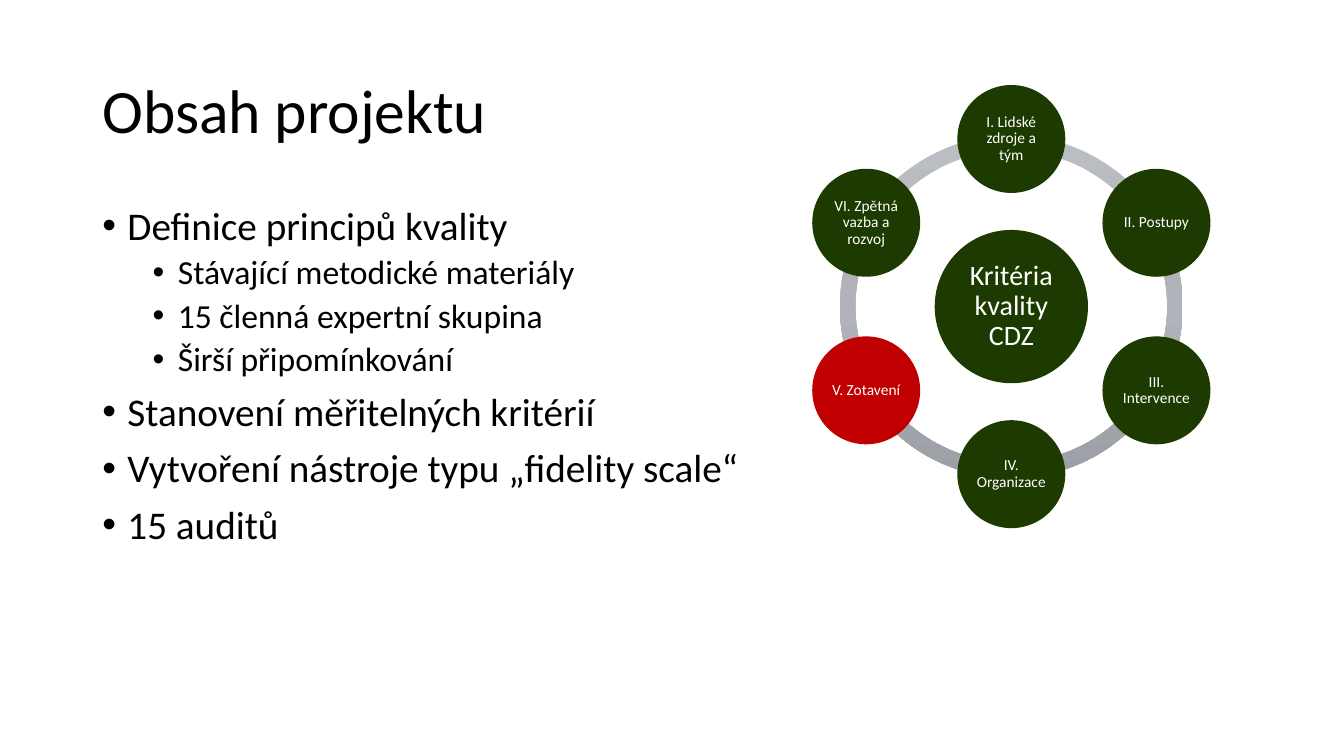
from copy import deepcopy
from math import cos, radians, sin

from lxml.etree import SubElement
from pptx import Presentation
from pptx.dml.color import RGBColor
from pptx.enum.shapes import MSO_SHAPE
from pptx.enum.text import MSO_ANCHOR, PP_ALIGN
from pptx.oxml.ns import qn
from pptx.util import Inches, Pt

THEME = {
    "font": "Calibri",
    "ink": "000000", "light": "FFFFFF", "green": "1D3A00", "red": "C00000",
    "ring": [(0, "BABDC2"), (0.5, "B0B3BA"), (1, "9C9FA6")],
    "title": 44, "hub": 20, "satellite": 11,
    "levels": [  # type size, space before, left indent in inches
        (28, 10, 0.25),
        (24, 5, 0.75),
    ],
}
COLUMNS, ROWS = 160, 90
CELL = Inches(1) / 12  # the grid is square

deck = Presentation()
deck.slide_width, deck.slide_height = int(COLUMNS * CELL), int(ROWS * CELL)
page = deck.slides.add_slide(deck.slide_layouts[6])


def cells(*counts):
    return [int(count * CELL) for count in counts]


def add_span(para, text, size, color):
    para.line_spacing = 0.9
    span = para.add_run()
    span.text = text
    span.font.name = THEME["font"]
    span.font.size = Pt(size)
    span.font.color.rgb = RGBColor.from_string(color)


# Title
title = page.shapes.add_textbox(*cells(11, 4.8, 138, 17.4)).text_frame
title.word_wrap = True
title.vertical_anchor = MSO_ANCHOR.MIDDLE
add_span(title.paragraphs[0], "Obsah projektu", THEME["title"], THEME["ink"])

# Bulleted outline
outline = [
    (0, "Definice principů kvality"),
    (1, "Stávající metodické materiály"),
    (1, "15 členná expertní skupina"),
    (1, "Širší připomínkování"),
    (0, "Stanovení měřitelných kritérií"),
    (0, "Vytvoření nástroje typu „fidelity scale“"),
    (0, "15 auditů"),
]
body = page.shapes.add_textbox(*cells(11, 24, 138, 57.1)).text_frame
body.word_wrap = True
for index, (level, text) in enumerate(outline):
    para = body.add_paragraph() if index else body.paragraphs[0]
    size, space, indent = THEME["levels"][level]
    para.level = level
    para.space_before = Pt(space)
    add_span(para, text, size, THEME["ink"])
    properties = para._p.get_or_add_pPr()
    properties.set("marL", str(Inches(indent)))
    properties.set("indent", str(Inches(-0.25)))
    SubElement(properties, qn("a:buFont"), typeface="Arial")
    SubElement(properties, qn("a:buChar"), char="•")

# Ring of six arcs
center_x, center_y = 120.4, 36.5
ring_size, hub_size, satellite_size, orbit = 40.8, 18.25, 12.85, 19.95
for start in (210, 150, 90, 30, 330, 270):
    arc = page.shapes.add_shape(
        MSO_SHAPE.BLOCK_ARC,
        *cells(center_x - ring_size / 2, center_y - ring_size / 2, ring_size, ring_size))
    arc.shadow.inherit = False
    arc.line.fill.background()
    # Angles are stored in 60000ths of a degree, adjustments in 100000ths
    arc.adjustments[0] = start * 0.6
    arc.adjustments[1] = (start + 60) % 360 * 0.6
    arc.adjustments[2] = 0.045
    arc.fill.gradient()
    arc.fill.gradient_angle = 270
    stop_list = arc._element.spPr.find(".//" + qn("a:gsLst"))
    stop_list.insert(1, deepcopy(stop_list[0]))
    for stop, (position, color) in zip(arc.fill.gradient_stops, THEME["ring"]):
        stop.position = position
        stop.color.rgb = RGBColor.from_string(color)

# Hub, then satellites clockwise from the top
satellites = [
    ("I. Lidské zdroje a tým", "green"),
    ("II. Postupy", "green"),
    ("III. Intervence", "green"),
    ("IV. Organizace", "green"),
    ("V. Zotavení", "red"),
    ("VI. Zpětná vazba a rozvoj", "green"),
]
circles = [("Kritéria kvality CDZ", "green", center_x, center_y, hub_size, "hub", 0.03)]
for index, (text, color) in enumerate(satellites):
    angle = radians(index * 360 / len(satellites) - 90)
    circles.append((text, color, center_x + orbit * cos(angle), center_y + orbit * sin(angle),
                    satellite_size, "satellite", 0.02))

for text, color, x, y, diameter, role, inset in circles:
    circle = page.shapes.add_shape(
        MSO_SHAPE.OVAL, *cells(x - diameter / 2, y - diameter / 2, diameter, diameter))
    circle.shadow.inherit = False
    circle.fill.solid()
    circle.fill.fore_color.rgb = RGBColor.from_string(THEME[color])
    circle.line.fill.background()
    frame = circle.text_frame
    frame.word_wrap = True
    frame.vertical_anchor = MSO_ANCHOR.MIDDLE
    frame.margin_left = frame.margin_right = Inches(inset)
    frame.margin_top = frame.margin_bottom = Inches(inset)
    frame.paragraphs[0].alignment = PP_ALIGN.CENTER
    add_span(frame.paragraphs[0], text, THEME[role], THEME["light"])

deck.save("out.pptx")
